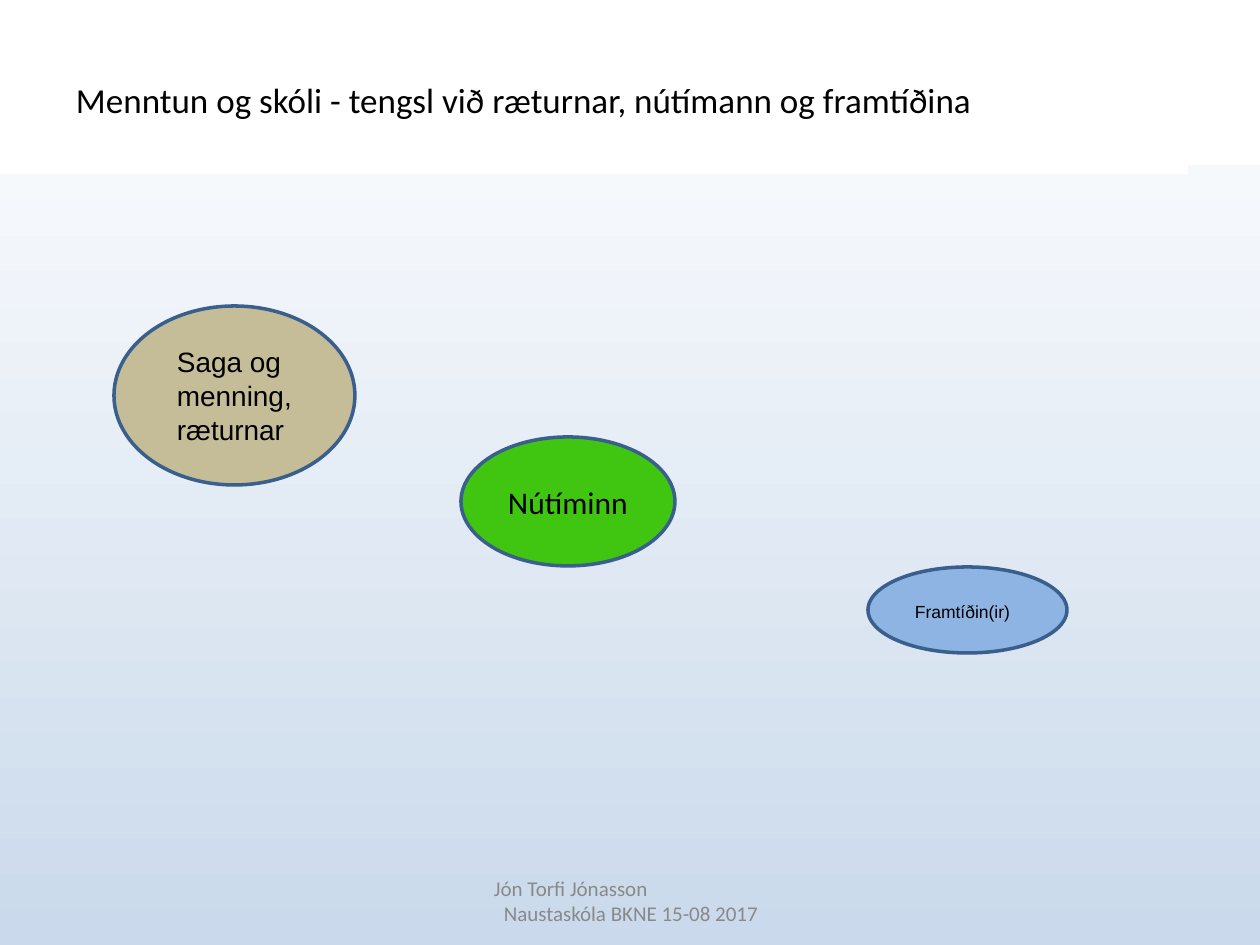
from pptx import Presentation
from pptx import util as u
from pptx.dml import color
from pptx.enum import shapes, text

SCALE = 914400 / 126
WIDE, HIGH = 1260, 945
OVAL = shapes.MSO_SHAPE.OVAL
RECT = shapes.MSO_SHAPE.RECTANGLE
LEFT, MID = text.PP_ALIGN.LEFT, text.PP_ALIGN.CENTER
PAD = (13, 6, 13, 6)


def px(n):
    return u.Emu(round(n * SCALE))


def rgb(code):
    return color.RGBColor.from_string(code)


def area(box):
    return [px(n) for n in box]


def form(item, values):
    for name, value in values.items():
        setattr(item, name, value)


def write(shape, lines, size, face="Calibri", ink="000000", align=LEFT,
          anchor=text.MSO_ANCHOR.MIDDLE, pad=PAD):
    frame = shape.text_frame
    sides = ("margin_left", "margin_top", "margin_right", "margin_bottom")
    form(frame, {"word_wrap": True, "vertical_anchor": anchor,
                 **dict(zip(sides, area(pad)))})
    frame.text = "\n".join(lines)
    for para in frame.paragraphs:
        para.alignment = align
        for run in para.runs:
            form(run.font, {"name": face, "size": u.Pt(size)})
            run.font.color.rgb = rgb(ink)
    return frame


def draw(host, kind, box, fill=None, line=None):
    shape = host.add_shape(kind, *area(box))
    shape.shadow.inherit = False
    if fill:
        shape.fill.solid()
        shape.fill.fore_color.rgb = rgb(fill)
    if line:
        shape.line.color.rgb = rgb(line)
        shape.line.width = u.Pt(2)
    else:
        shape.line.fill.background()
    return shape


def backdrop(host, box):
    fill = draw(host, RECT, box).fill
    fill.gradient()
    fill.gradient_angle = 270
    for stop, code in zip(fill.gradient_stops, ("F6F9FC", "CAD9EB")):
        stop.color.rgb = rgb(code)


def title(host, box):
    band = draw(host, RECT, box, "FFFFFF")
    write(band, ["Menntun og skóli - tengsl við ræturnar, nútímann og framtíðina"],
          20, pad=(76, 14, 13, 6))


def footer(host, box):
    note = host.add_textbox(*area(box))
    frame = write(note, ["Jón Torfi Jónasson", "Naustaskóla BKNE 15-08 2017"],
                  12, ink="898989", align=MID)
    first = frame.paragraphs[0]
    first.alignment = LEFT
    first._p.get_or_add_pPr().set("marL", str(px(50)))


def bubble(host, box, fill, words, size, face, inner=None):
    """Oval with centred words, or grouped with a label at inner, relative to box."""
    if not inner:
        oval = draw(host, OVAL, box, fill, "3A5F8C")
        write(oval, [words], size, face, align=MID)
        return
    group = host.add_group_shape().shapes
    draw(group, OVAL, box, fill, "3A5F8C")
    left, top, wide, high = inner
    label = group.add_textbox(*area((box[0] + left, box[1] + top, wide, high)))
    write(label, [words], size, face, anchor=text.MSO_ANCHOR.TOP)


def main():
    deck = Presentation()
    form(deck, {"slide_width": px(WIDE), "slide_height": px(HIGH)})
    host = deck.slides.add_slide(deck.slide_layouts[6]).shapes
    backdrop(host, (0, 165, WIDE, HIGH - 165))
    title(host, (0, 16, 1188, 158))
    footer(host, (431, 876, 400, 50))
    bubble(host, (114, 306, 241, 179), "C4BD97", "Saga og menning, ræturnar",
           16, "Arial", (50, 33, 179, 115))
    bubble(host, (461, 437, 214, 129), "40C610", "Nútíminn", 18, "Calibri")
    bubble(host, (868, 567, 199, 86), "8EB4E3", "Framtíðin(ir)",
           10, "Arial", (34, 28, 149, 34))
    deck.save("out.pptx")


if __name__ == "__main__":
    main()
